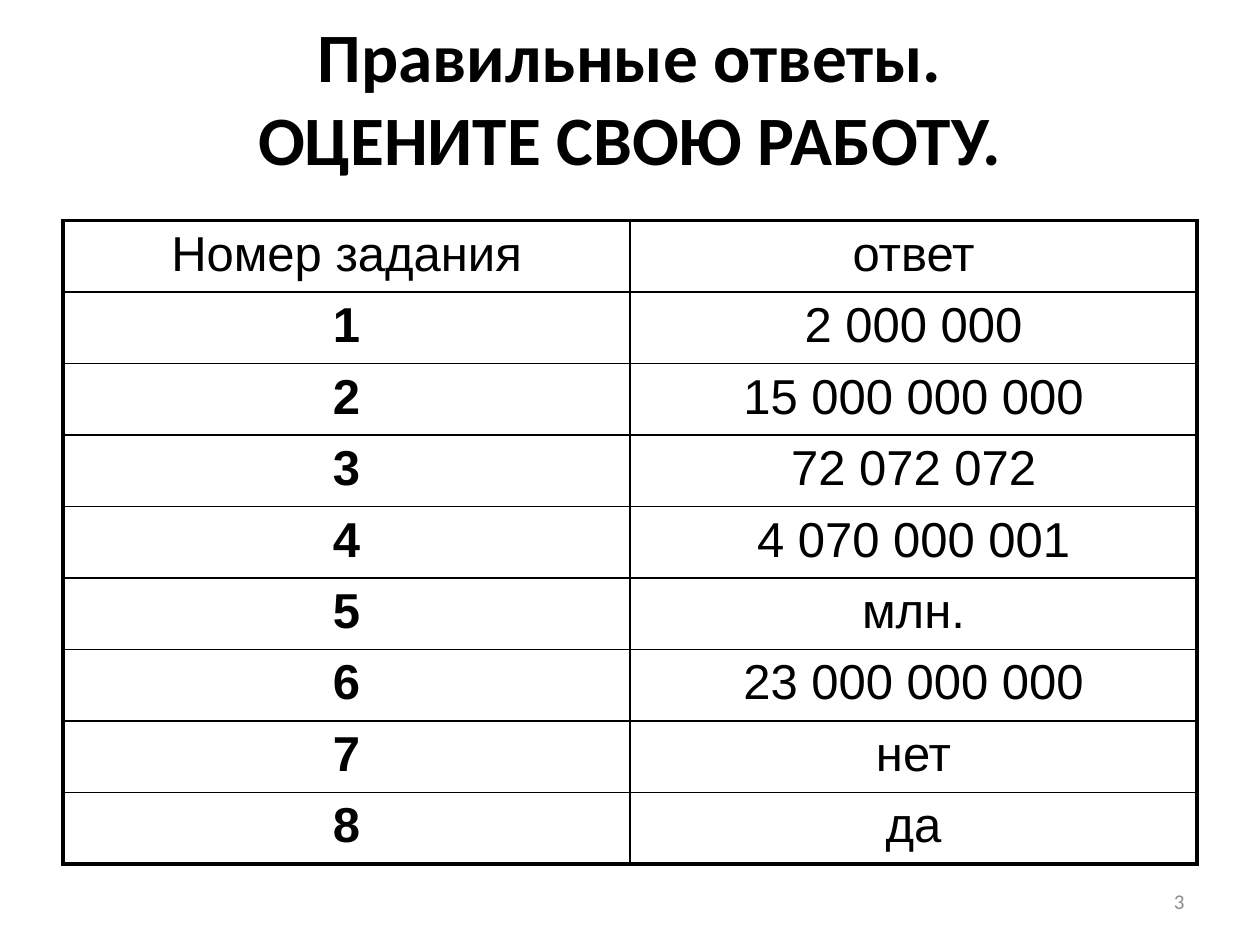
from pptx import Presentation
from pptx.util import Pt
from pptx.dml.color import RGBColor
from pptx.enum.text import PP_ALIGN as Align, MSO_ANCHOR as Anchor
from pptx.oxml import parse_xml
from pptx.oxml.ns import nsdecls

THIN, THICK = 1, 2.25


def style(paragraph, font, size, color, align, bold=False):
    paragraph.alignment = align
    for run in paragraph.runs:
        run.font.name = font
        run.font.size = Pt(size)
        run.font.bold = bold
        run.font.color.rgb = RGBColor.from_string(color)


def add_text(slide, text, left, top, width, height):
    box = slide.shapes.add_textbox(Pt(left), Pt(top), Pt(width), Pt(height))
    box.text_frame.word_wrap = True
    box.text_frame.vertical_anchor = Anchor.MIDDLE
    box.text_frame.text = text
    return box.text_frame.paragraphs[0]


prs = Presentation()
prs.slide_width, prs.slide_height = Pt(720), Pt(540)
slide = prs.slides.add_slide(prs.slide_layouts[6])

# Title
title = add_text(slide, "Правильные ответы.\vОЦЕНИТЕ СВОЮ РАБОТУ.", 36, 21.6, 648, 67)
style(title, "Calibri", 39.6, "000000", Align.CENTER, bold=True)

# Answer table
answers = ["2 000 000", "15 000 000 000", "72 072 072", "4 070 000 001",
           "млн.", "23 000 000 000", "нет", "да"]
rows = [("Номер задания", "ответ")]
rows += [(str(number), answer) for number, answer in enumerate(answers, 1)]
last = len(rows) - 1

answer_frame = slide.shapes.add_table(len(rows), 2, Pt(36), Pt(126), Pt(648), Pt(367.2))
answer_table = answer_frame.table
answer_table.first_row = False
answer_table.horz_banding = False

for r, row in enumerate(rows):
    answer_table.rows[r].height = Pt(35.3)
    for c, text in enumerate(row):
        cell = answer_table.cell(r, c)
        cell.text_frame.text = text
        style(cell.text_frame.paragraphs[0], "Arial", 28, "000000", Align.CENTER,
              bold=r > 0 and c == 0)

        # Thick lines on the outer edge, thin ones inside
        outer = {"lnL": c == 0, "lnR": c == 1, "lnT": r == 0, "lnB": r == last}
        for side, is_outer in outer.items():
            width = Pt(THICK if is_outer else THIN)
            cell._tc.get_or_add_tcPr().append(parse_xml(
                f'<a:{side} {nsdecls("a")} w="{width}"><a:solidFill>'
                f'<a:srgbClr val="000000"/></a:solidFill></a:{side}>'))
        cell.fill.background()

answer_frame.height = Pt(367.2)

# Slide number
slide_number = add_text(slide, "3", 516, 500.5, 168, 28.75)
style(slide_number, "Calibri", 12, "8C8C8C", Align.RIGHT)

prs.save("out.pptx")
